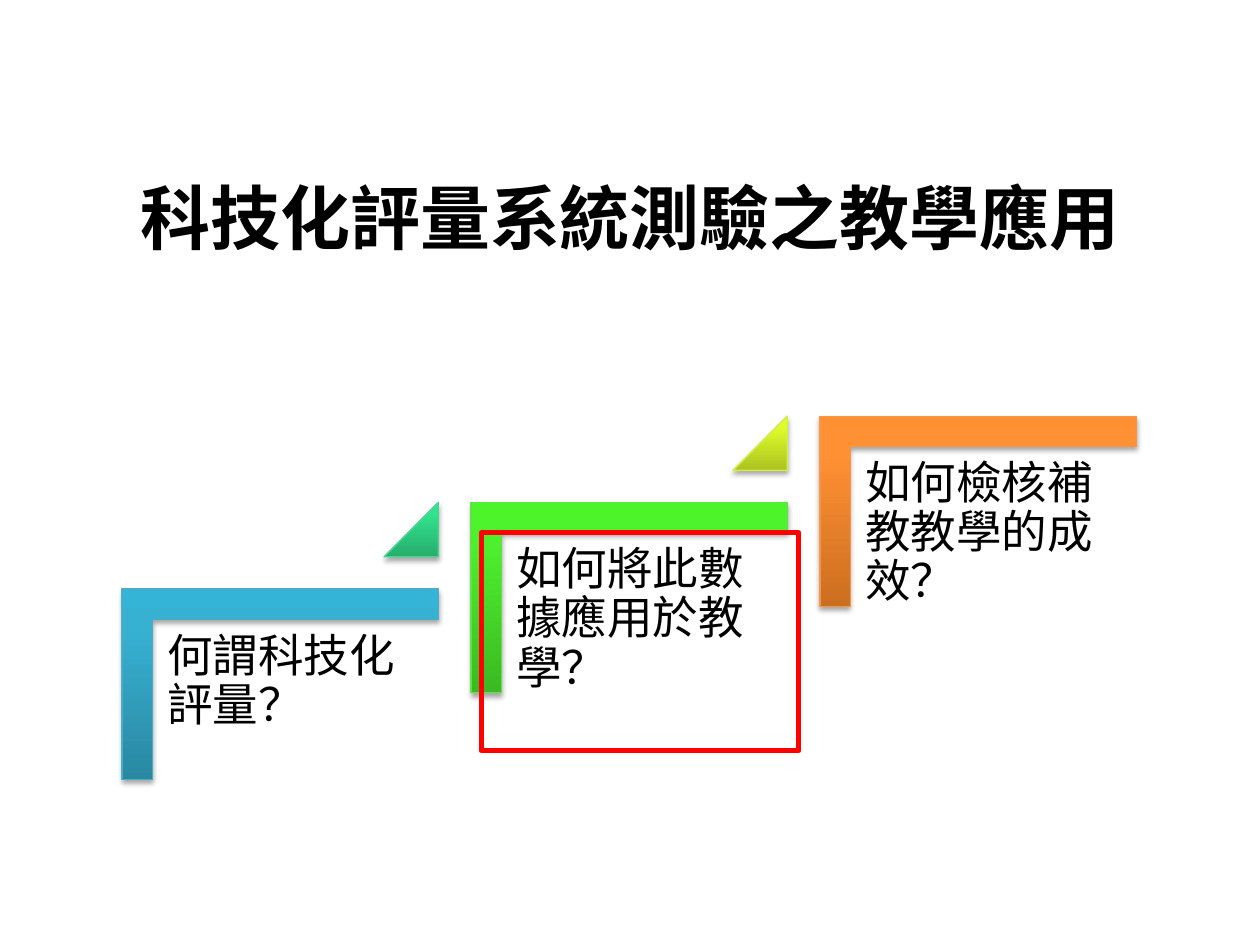
from pptx import Presentation
from pptx.dml.color import RGBColor
from pptx.enum.shapes import MSO_SHAPE
from pptx.enum.text import MSO_ANCHOR, PP_ALIGN
from pptx.oxml import parse_xml
from pptx.oxml.ns import nsdecls, qn
from pptx.util import Pt
from lxml.etree import SubElement

FONT = "Noto Sans CJK SC"
COLORS = {"text": "000000", "highlight": "FF0000", "shadow": "000000"}
GRADIENTS = {
    "blue": ("2A88A2", "37B1D2", "34B4D6", "4BACC6"),
    "teal": ("26AE6D", "32E28D", "2EE68E", "48D491"),
    "green": ("3CB923", "4EF02E", "4CF52A", "60E146"),
    "lime": ("ACC321", "DFFD2B", "E1FF2B", "D5EC46"),
    "orange": ("CC6E20", "FF9034", "FF9136", "F79646"),
}
STEPS = [
    ("何謂科技化評量？", "blue", "teal"),
    ("如何將此數據應用於教學？", "green", "lime"),
    ("如何檢核補教教學的成效？", "orange", None),
]


def add_text(page, box, text, size, bold=False):
    """Add a wrapped text box with one styled paragraph and return its frame."""
    frame = page.shapes.add_textbox(*map(Pt, box)).text_frame
    frame.word_wrap = True
    frame.text = text
    span = frame.paragraphs[0].runs[0]
    span.font.name = FONT
    span.font.size = Pt(size)
    span.font.bold = bold
    span.font.color.rgb = RGBColor.from_string(COLORS["text"])
    SubElement(span.font._element, qn("a:ea")).set("typeface", FONT)
    return frame


def style_glossy(shape, name):
    """Give a shape an upright gradient, a thin outline and a soft shadow below."""
    *stops, outline = GRADIENTS[name]
    shape.line.color.rgb = RGBColor.from_string(outline)
    shape.line.width = Pt(0.75)
    shape.fill.gradient()
    stop_xml = "".join(
        f'<a:gs pos="{place}"><a:srgbClr val="{color}"/></a:gs>'
        for place, color in zip((0, 80000, 100000), stops)
    )
    properties = shape._element.spPr
    properties.replace(properties.find(qn("a:gradFill")), parse_xml(
        f'<a:gradFill {nsdecls("a")} rotWithShape="0"><a:gsLst>{stop_xml}</a:gsLst>'
        '<a:lin ang="16200000" scaled="0"/></a:gradFill>'
    ))
    properties.append(parse_xml(
        f'<a:effectLst {nsdecls("a")}><a:outerShdw blurRad="{Pt(3.1)}" '
        f'dist="{Pt(1.8)}" dir="5400000" rotWithShape="0">'
        f'<a:srgbClr val="{COLORS["shadow"]}"><a:alpha val="35000"/></a:srgbClr>'
        '</a:outerShdw></a:effectLst>'
    ))


def add_title(page, box, text):
    """Add the centred bold title."""
    frame = add_text(page, box, text, 40, bold=True)
    frame.vertical_anchor = MSO_ANCHOR.MIDDLE
    frame.paragraphs[0].alignment = PP_ALIGN.CENTER


def add_step(page, box, rise, text, corner_color, triangle_color):
    """Add one stair step: a corner bracket, its question and a triangle above."""
    left, top, width, height = box
    shift = (width - height) / 2
    corner = page.shapes.add_shape(
        MSO_SHAPE.CORNER, Pt(left + shift), Pt(top - shift), Pt(height), Pt(width))
    corner.rotation = 90
    corner.adjustments[0] = corner.adjustments[1] = 0.16
    style_glossy(corner, corner_color)

    frame = add_text(page, (left + 18, top + 17.3, 162.7, 142.6), text, 26)
    frame.margin_left = frame.margin_right = Pt(7.8)
    frame.margin_top = frame.margin_bottom = Pt(7.8)
    frame.paragraphs[0].line_spacing = 0.9

    if triangle_color:
        side = 31
        triangle = page.shapes.add_shape(
            MSO_SHAPE.ISOSCELES_TRIANGLE, Pt(left + width - side), Pt(top - rise),
            Pt(side), Pt(side))
        triangle.adjustments[0] = 1
        style_glossy(triangle, triangle_color)


def add_staircase(page, box, run, rise):
    """Place the steps from the lower left, each moved by the run and the rise."""
    left, top, width, height = box
    for index, step in enumerate(STEPS):
        place = (left + index * run, top - index * rise, width, height)
        add_step(page, place, rise, *step)


def add_highlight(page, box):
    """Add the unfilled frame around the current question."""
    frame = page.shapes.add_shape(MSO_SHAPE.RECTANGLE, *map(Pt, box))
    frame.shadow.inherit = False
    frame.fill.background()
    frame.line.color.rgb = RGBColor.from_string(COLORS["highlight"])
    frame.line.width = Pt(3)


def main():
    """Build and save the one-page deck."""
    deck = Presentation()
    deck.slide_width, deck.slide_height = Pt(720), Pt(540)
    page = deck.slides.add_slide(deck.slide_layouts[6])
    add_title(page, (36, 78.5, 648, 90), "科技化評量系統測驗之教學應用")
    add_staircase(page, (69.8, 336.6, 180.7, 108.7), run=199.4, rise=49.4)
    add_highlight(page, (275, 304.5, 181.5, 124.5))
    deck.save("out.pptx")


if __name__ == "__main__":
    main()
